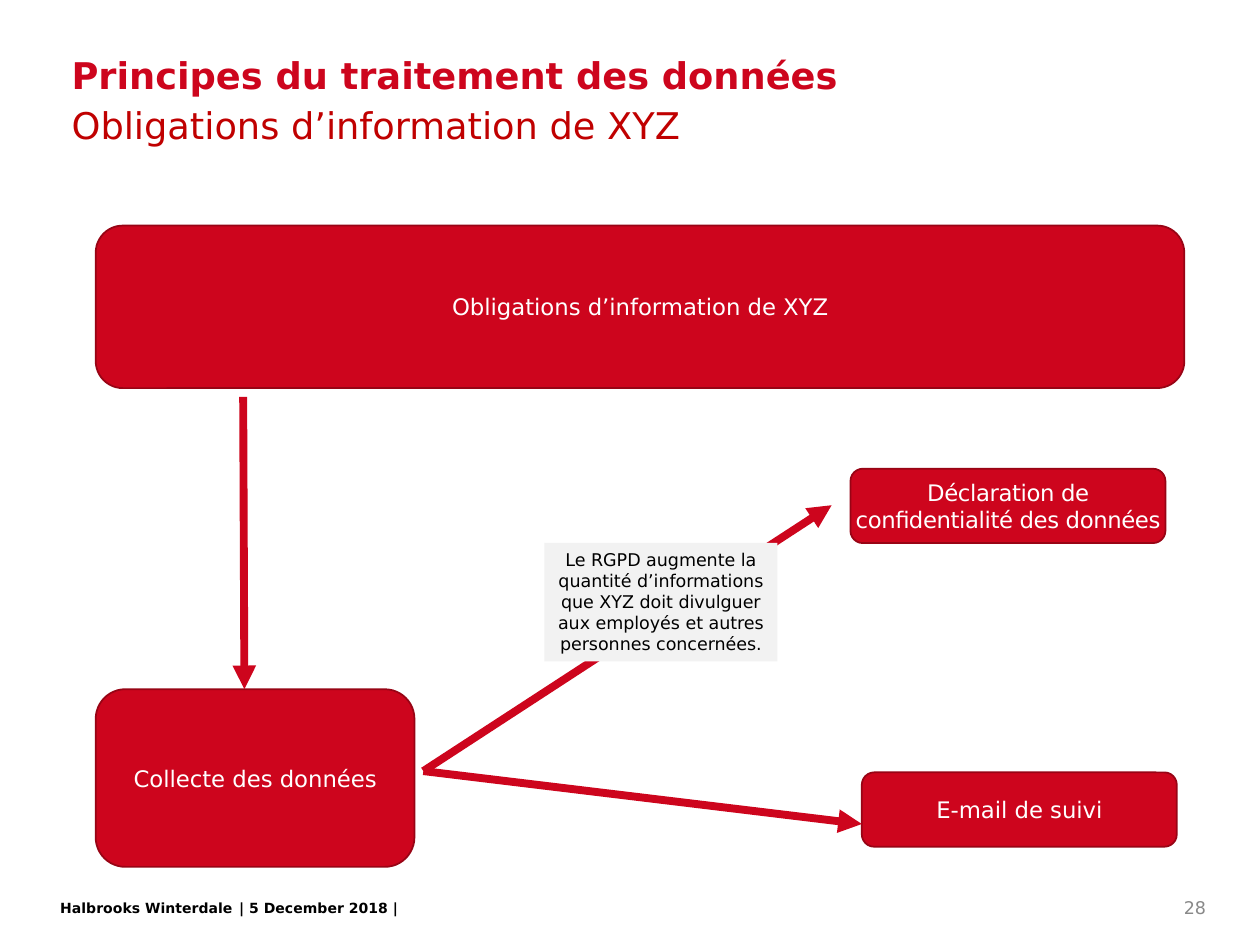
from dataclasses import dataclass
from pptx import Presentation
from pptx.dml.color import RGBColor as Rgb
from pptx.enum.shapes import MSO_CONNECTOR as Conn, MSO_SHAPE as Geo
from pptx.enum.text import MSO_ANCHOR as Anchor, PP_ALIGN as Align
from pptx.oxml.ns import qn
from pptx.util import Inches, Pt
from lxml.etree import SubElement


@dataclass(frozen=True)
class Theme:
    font: str = "DejaVu Sans"
    red: str = "CD051D"
    edge: str = "980415"
    deep: str = "C00000"
    grey: str = "898989"
    pale: str = "F2F2F2"
    white: str = "FFFFFF"
    black: str = "000000"
    head: float = 21
    label: float = 13
    note: float = 10
    foot: float = 8


class Page:
    def __init__(self, slide, theme):
        self.slide = slide
        self.theme = theme

    def fill(self, shape, text, size, color, bold=False,
             align=Align.LEFT, anchor=Anchor.TOP, wrap=True):
        """Put one styled run of text into the shape."""
        frame = shape.text_frame
        frame.word_wrap = wrap
        frame.vertical_anchor = anchor
        par = frame.paragraphs[0]
        par.alignment = align
        run = par.add_run()
        run.text = text
        font = run.font
        font.name = self.theme.font
        font.size = Pt(size)
        font.bold = bold
        font.color.rgb = Rgb.from_string(color)
        return par

    def text(self, box, text, size, color, **style):
        shape = self.slide.shapes.add_textbox(*map(Inches, box))
        return self.fill(shape, text, size, color, **style)

    def shape(self, geo, box, fill, line=None):
        shape = self.slide.shapes.add_shape(geo, *map(Inches, box))
        shape.shadow.inherit = False
        shape.fill.solid()
        shape.fill.fore_color.rgb = Rgb.from_string(fill)
        if line:
            shape.line.color.rgb = Rgb.from_string(line)
            shape.line.width = Pt(1)
        else:
            shape.line.fill.background()
        return shape

    def step(self, box, text, tight=False):
        """Red rounded box; tight trims the side margins and letter gaps."""
        t = self.theme
        shape = self.shape(Geo.ROUNDED_RECTANGLE, box, t.red, t.edge)
        par = self.fill(shape, text, t.label, t.white,
                        align=Align.CENTER, anchor=Anchor.MIDDLE)
        if tight:
            frame = shape.text_frame
            frame.margin_left = frame.margin_right = Inches(0.01)
            par.runs[0].font._element.set("spc", "-20")

    def note(self, box, text):
        t = self.theme
        shape = self.shape(Geo.RECTANGLE, box, t.pale)
        self.fill(shape, text, t.note, t.black, align=Align.CENTER)

    def arrow(self, start, end):
        link = self.slide.shapes.add_connector(
            Conn.STRAIGHT, *map(Inches, start + end))
        link.line.color.rgb = Rgb.from_string(self.theme.red)
        link.line.width = Pt(4.5)
        props = link._element.spPr
        SubElement(props.find(qn("a:ln")), qn("a:tailEnd"), type="triangle")
        SubElement(props, qn("a:effectLst"))


def main():
    deck = Presentation()
    deck.slide_width, deck.slide_height = Inches(10), Inches(7.5)
    t = Theme()
    page = Page(deck.slides.add_slide(deck.slide_layouts[6]), t)
    duty = "Obligations d’information de XYZ"

    for left, width, text in ((0.38, 1.73, "Halbrooks Winterdale"),
                              (1.8, 1.64, "| 5 December 2018 |")):
        page.text((left, 7.09, width, 0.24), text, t.foot, t.black,
                  bold=True, wrap=False)
    page.text((8.8, 7.05, 0.87, 0.3), "28", t.note, t.grey,
              align=Align.RIGHT, anchor=Anchor.MIDDLE)

    title = page.text((0.47, 0.44, 9.06, 0.36),
                      "Principes du traitement des données", t.head, t.red,
                      bold=True, anchor=Anchor.MIDDLE)
    sub = page.text((0.47, 0.81, 9.06, 0.41), duty, t.head, t.deep)
    title.line_spacing = sub.line_spacing = 0.9

    page.step((0.76, 1.79, 8.64, 1.29), duty)
    page.step((0.76, 5.47, 2.53, 1.41), "Collecte des données")
    page.step((6.84, 6.13, 2.5, 0.59), "E-mail de suivi")
    page.step((6.75, 3.72, 2.5, 0.59),
              "Déclaration de confidentialité des données", tight=True)

    fork = (3.36, 6.12)
    page.arrow(fork, (6.6, 4.01))
    page.arrow((1.93, 3.15), (1.94, 5.47))
    page.arrow(fork, (6.84, 6.54))

    page.note((4.32, 4.31, 1.85, 0.94),
              "Le RGPD augmente la quantité d’informations que XYZ doit "
              "divulguer aux employés et autres personnes concernées.")
    deck.save("out.pptx")


if __name__ == "__main__":
    main()
